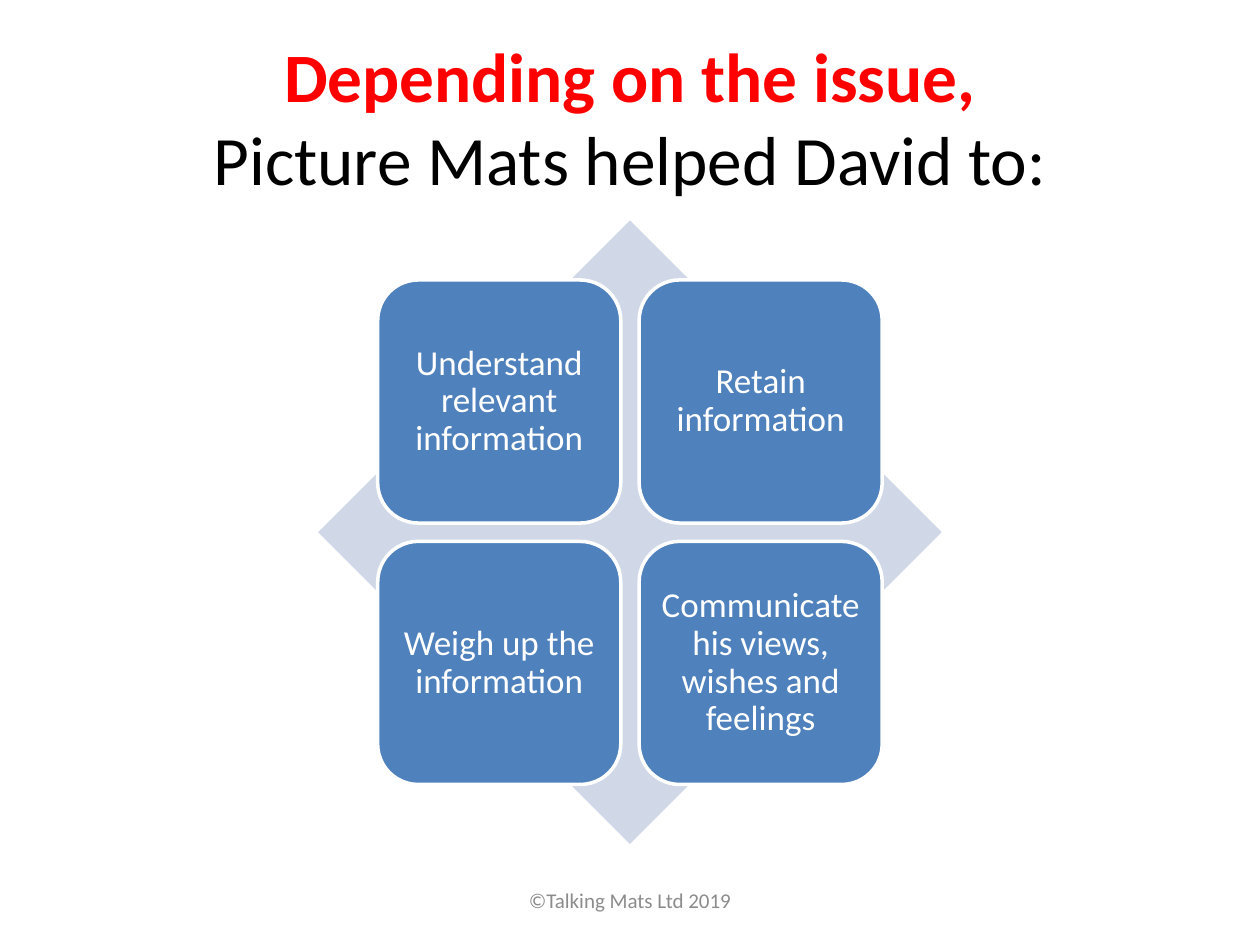
import pptx
import pptx.util
import pptx.dml.color
import pptx.enum.shapes
import pptx.enum.text
from dataclasses import dataclass
from pptx.util import Cm


@dataclass(frozen=True)
class Theme:
    font: str = "Calibri"
    emphasis: str = "FF0000"
    ink: str = "000000"
    card: str = "4F81BD"
    white: str = "FFFFFF"
    diamond: str = "D0D8E8"
    muted: str = "8C8C8C"
    title_size: float = 39.6
    card_size: float = 20
    footer_size: float = 12


THEME = Theme()
TITLE = ("Depending on the issue,", "Picture Mats helped David to:")
ABILITIES = [
    ["Understand relevant information", "Retain information"],
    ["Weigh up the information", "Communicate his views, wishes and feelings"],
]
FOOTER = "©Talking Mats Ltd 2019"

# Lengths in centimetres
SLIDE_WIDTH, SLIDE_HEIGHT = 25.4, 19.05
CENTRE_X, CENTRE_Y = SLIDE_WIDTH / 2, 10.73
DIAMOND_SIZE = 12.57
CARD_SIZE, CARD_GAP = 4.9, 0.37
CARD_INSET = 0.19


def colour(code):
    return pptx.dml.color.RGBColor.from_string(code)


def style_run(run, size, code, bold=False):
    run.font.name = THEME.font
    run.font.size = pptx.util.Pt(size)
    run.font.bold = bold
    run.font.color.rgb = colour(code)


def centre_text(frame, text):
    """Set wrapped text centred both ways and return its paragraph."""
    frame.text = text
    frame.word_wrap = True
    frame.vertical_anchor = pptx.enum.text.MSO_ANCHOR.MIDDLE
    paragraph = frame.paragraphs[0]
    paragraph.alignment = pptx.enum.text.PP_ALIGN.CENTER
    return paragraph


def add_centred_box(slide, text, top, width, height):
    left = CENTRE_X - width / 2
    box = slide.shapes.add_textbox(Cm(left), Cm(top), Cm(width), Cm(height))
    return centre_text(box.text_frame, text)


def add_square(slide, preset, centre_x, centre_y, size, fill):
    shape = slide.shapes.add_shape(
        preset, Cm(centre_x - size / 2), Cm(centre_y - size / 2), Cm(size), Cm(size))
    shape.shadow.inherit = False
    shape.fill.solid()
    shape.fill.fore_color.rgb = colour(fill)
    shape.line.fill.background()
    return shape


def add_card(slide, text, centre_x, centre_y):
    card = add_square(slide, pptx.enum.shapes.MSO_SHAPE.ROUNDED_RECTANGLE,
                      centre_x, centre_y, CARD_SIZE, THEME.card)
    card.line.color.rgb = colour(THEME.white)
    card.line.width = pptx.util.Pt(2)
    frame = card.text_frame
    frame.margin_left = frame.margin_right = Cm(CARD_INSET)
    frame.margin_top = frame.margin_bottom = Cm(CARD_INSET)
    paragraph = centre_text(frame, text)
    paragraph.line_spacing = 0.9
    style_run(paragraph.runs[0], THEME.card_size, THEME.white)


def main():
    deck = pptx.Presentation()
    deck.slide_width, deck.slide_height = Cm(SLIDE_WIDTH), Cm(SLIDE_HEIGHT)
    slide = deck.slides.add_slide(deck.slide_layouts[6])

    title = add_centred_box(slide, "\v".join(TITLE), 0.76, 22.86, 3.18)
    lead, rest = title.runs
    style_run(lead, THEME.title_size, THEME.emphasis, bold=True)
    style_run(rest, THEME.title_size, THEME.ink)

    add_square(slide, pptx.enum.shapes.MSO_SHAPE.DIAMOND,
               CENTRE_X, CENTRE_Y, DIAMOND_SIZE, THEME.diamond)
    pitch = CARD_SIZE + CARD_GAP
    for row, abilities in enumerate(ABILITIES):
        for column, ability in enumerate(abilities):
            add_card(slide, ability, CENTRE_X + (column - 0.5) * pitch,
                     CENTRE_Y + (row - 0.5) * pitch)

    footer = add_centred_box(slide, FOOTER, 17.65, 8.04, 1.01)
    style_run(footer.runs[0], THEME.footer_size, THEME.muted)

    deck.save("out.pptx")


if __name__ == "__main__":
    main()
